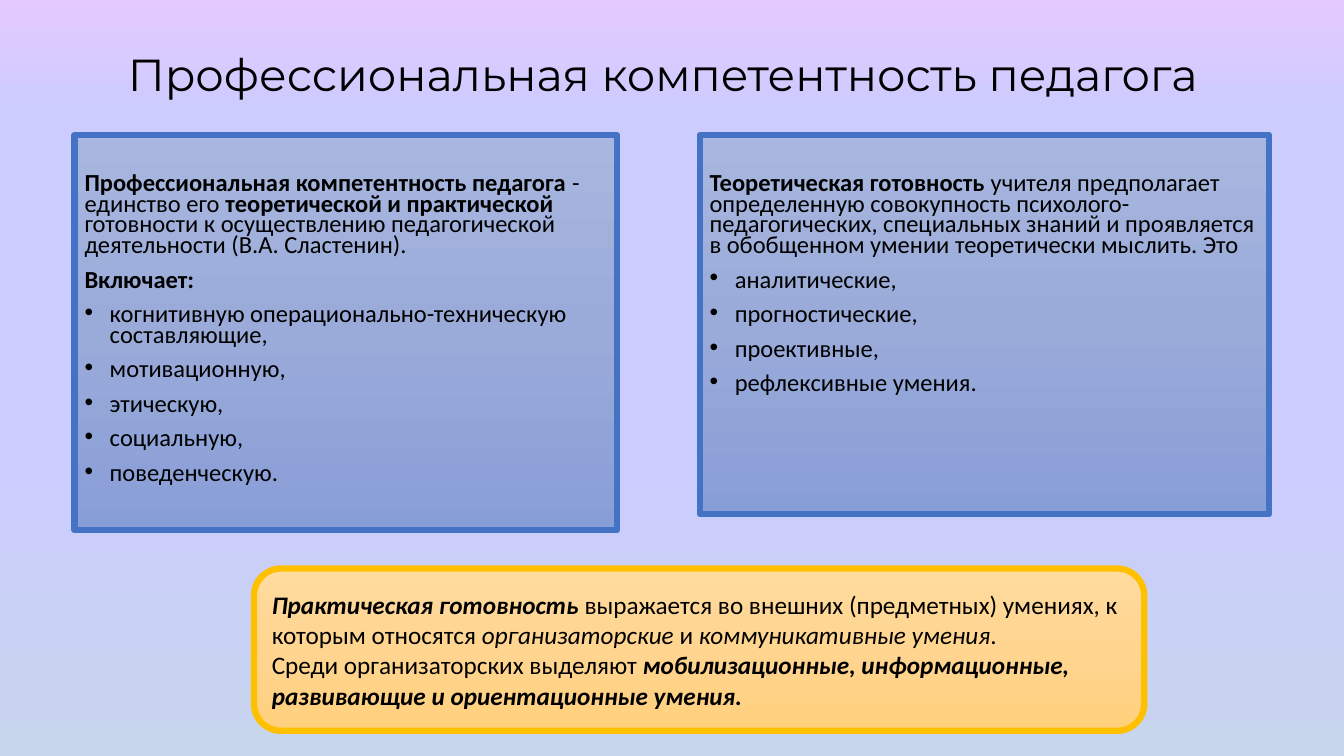
from lxml.etree import SubElement
from pptx import Presentation
from pptx.dml.color import RGBColor
from pptx.enum.shapes import MSO_SHAPE
from pptx.enum.text import MSO_ANCHOR, MSO_AUTO_SIZE, PP_ALIGN
from pptx.oxml.ns import qn
from pptx.util import Inches, Pt

BLACK = RGBColor(0x00, 0x00, 0x00)
BLUE = RGBColor(0x44, 0x72, 0xC4)
GOLD = RGBColor(0xFF, 0xC0, 0x00)
SKY = [
    (0, RGBColor(0xE4, 0xC9, 0xFF)),
    (15, RGBColor(0xCC, 0xCC, 0xFF)),
    (60, RGBColor(0xCC, 0xCC, 0xFF)),
    (100, RGBColor(0xC7, 0xD5, 0xED)),
]
STEEL = [
    (0, RGBColor(0xA8, 0xB7, 0xDF)),
    (50, RGBColor(0x9A, 0xAB, 0xD9)),
    (100, RGBColor(0x88, 0x9E, 0xD7)),
]
PEACH = [
    (0, RGBColor(0xFF, 0xDB, 0x9E)),
    (50, RGBColor(0xFF, 0xD5, 0x90)),
    (100, RGBColor(0xFF, 0xD0, 0x7C)),
]
HEAD = "Профессиональная компетентность педагога "
DENSE = {"line_spacing": 0.7, "space_before": Pt(10), "alignment": PP_ALIGN.LEFT}
PLAIN = {"alignment": PP_ALIGN.LEFT}
WHOLE = [
    [(HEAD, "b"), ("- единство его ", ""), ("теоретической и практической ", "b"),
     ("готовности к осуществлению педагогической деятельности (В.А. Сластенин).", "")],
    [("Включает:", "b")],
]
PARTS = [
    "когнитивную операционально-техническую составляющие,",
    "мотивационную,",
    "этическую,",
    "социальную,",
    "поведенческую.",
]
THEORY = [
    [("Теоретическая готовность ", "b"),
     ("учителя предполагает определенную совокупность психолого-педагогических, "
      "специальных знаний и проявляется в обобщенном умении теоретически мыслить. Это", "")],
]
SKILLS = ["аналитические,", "прогностические,", "проективные,", "рефлексивные умения."]
ACTION = [
    [("Практическая готовность ", "bi"),
     ("выражается во внешних (предметных) умениях, к которым относятся ", ""),
     ("организаторские ", "i"), ("и ", ""), ("коммуникативные умения", "i"), (".", "")],
    [("Среди организаторских выделяют ", ""),
     ("мобилизационные, информационные, развивающие и ориентационные умения.", "bi")],
]


def apply(item, style):
    for key, value in style.items():
        setattr(item, key, value)


class Deck:
    def __init__(self):
        self.show = Presentation()
        apply(self.show, {"slide_width": Inches(13.33), "slide_height": Inches(7.5)})
        self.slide = self.show.slides.add_slide(self.show.slide_layouts[5])

    def place(self, left, top, width, height):
        col = self.show.slide_width / 100
        row = self.show.slide_height / 100
        return {"left": round(left * col), "top": round(top * row),
                "width": round(width * col), "height": round(height * row)}

    def shade(self, fill, stops):
        fill.gradient()
        fill.gradient_angle = 270
        group = fill._fill._gradFill.find(qn("a:gsLst"))
        for stop in list(group):
            group.remove(stop)
        for share, color in stops:
            stop = SubElement(group, qn("a:gs"), pos=str(share * 1000))
            SubElement(stop, qn("a:srgbClr"), val=str(color))

    def words(self, para, runs, size, face="Calibri"):
        for text, mark in runs:
            run = para.add_run()
            run.text = text
            apply(run.font, {"name": face, "size": Pt(size),
                             "bold": "b" in mark, "italic": "i" in mark})
            run.font.color.rgb = BLACK

    def title(self, text, area):
        shape = self.slide.shapes.title
        apply(shape, self.place(*area))
        apply(shape.text_frame, {"vertical_anchor": MSO_ANCHOR.MIDDLE, "word_wrap": True,
                                 "auto_size": MSO_AUTO_SIZE.NONE})
        para = shape.text_frame.paragraphs[0]
        apply(para, {"alignment": PP_ALIGN.CENTER, "line_spacing": 0.9})
        self.words(para, [(text, "")], 32, "Montserrat")

    def bullet(self, para):
        props = para._p.get_or_add_pPr()
        props.set("marL", str(Inches(0.25)))
        props.set("indent", str(-Inches(0.25)))
        SubElement(props, qn("a:buFont"), typeface="Arial")
        SubElement(props, qn("a:buChar"), char="•")

    def card(self, kind, area, stops, edge, texts, items, size, style, frame):
        shape = self.slide.shapes.add_shape(kind, *self.place(*area).values())
        shape.shadow.inherit = False
        self.shade(shape.fill, stops)
        shape.line.color.rgb = edge
        shape.line.width = Pt(4.5)
        body = shape.text_frame
        apply(body, {"word_wrap": True, **frame})
        rows = texts + [[(item, "")] for item in items]
        for num, runs in enumerate(rows):
            para = body.add_paragraph() if num else body.paragraphs[0]
            apply(para, style)
            if num >= len(texts):
                self.bullet(para)
            self.words(para, runs, size)


def main():
    deck = Deck()
    deck.shade(deck.slide.background.fill, SKY)
    deck.title(HEAD, (3.53, 2.4, 92.5, 15.47))
    upper = {"vertical_anchor": MSO_ANCHOR.TOP, "margin_top": Inches(0.4)}
    for area, texts, items in [
        ((5.55, 17.87, 40.36, 52.27), WHOLE, PARTS),
        ((52.06, 17.87, 42.39, 50.13), THEORY, SKILLS),
    ]:
        deck.card(MSO_SHAPE.RECTANGLE, area, STEEL, BLUE, texts, items, 17.5, DENSE, upper)
    deck.card(MSO_SHAPE.ROUNDED_RECTANGLE, (18.9, 75.2, 66.24, 21.47), PEACH, GOLD,
              ACTION, [], 18, PLAIN, {"vertical_anchor": MSO_ANCHOR.MIDDLE})
    deck.show.save("out.pptx")


if __name__ == "__main__":
    main()
